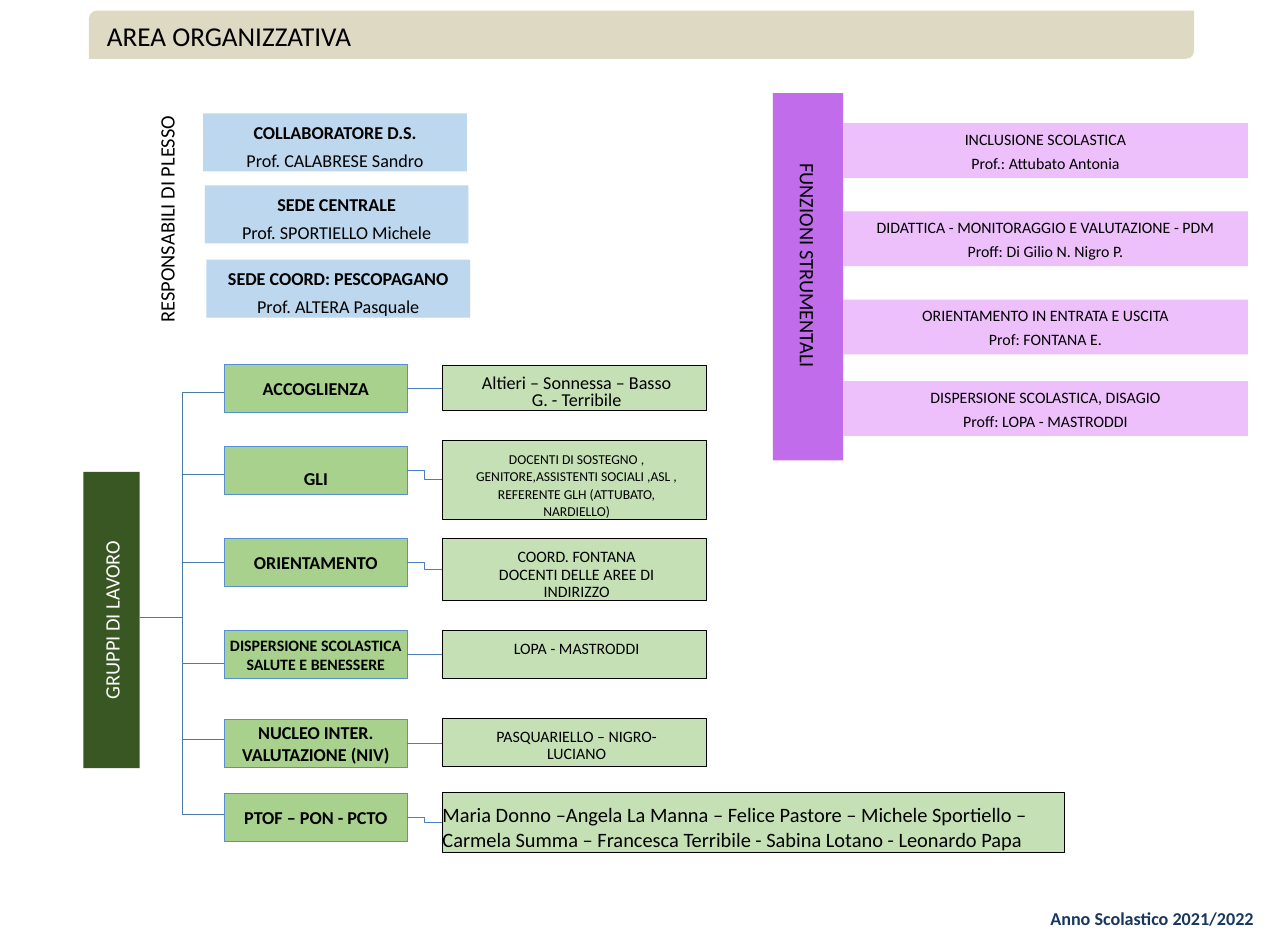
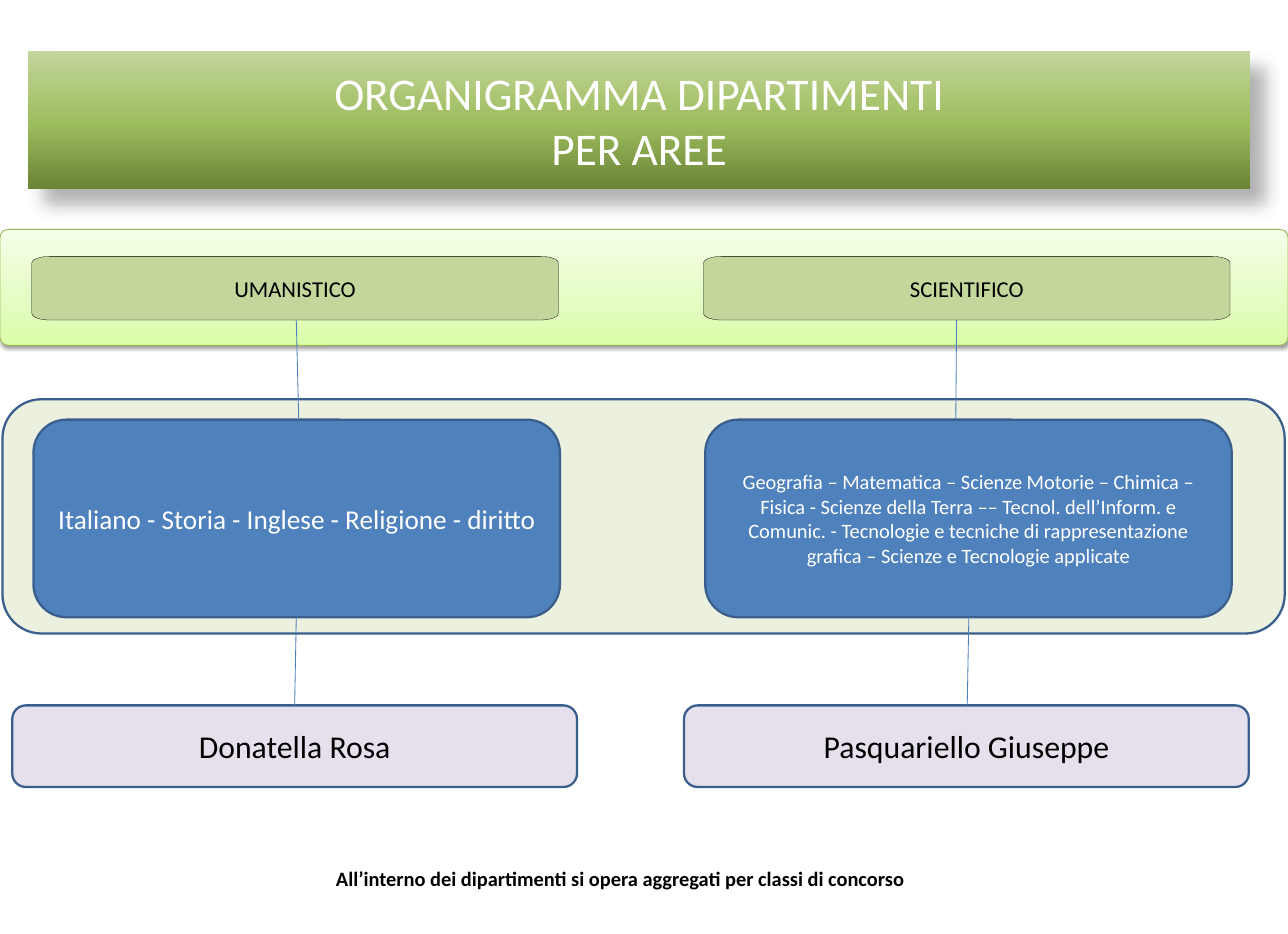
import copy
import math
from dataclasses import dataclass

from lxml import etree
from pptx import Presentation
from pptx import util as u
from pptx.dml.color import RGBColor
from pptx.enum import shapes, text
from pptx.oxml import ns

FONT = "Calibri"
CELL = u.Inches(0.1)
COLUMNS, ROWS = 157.8, 114.4

BLACK = RGBColor(0x00, 0x00, 0x00)
WHITE = RGBColor(0xFF, 0xFF, 0xFF)
NAVY = RGBColor(0x17, 0x37, 0x5E)
SAND = RGBColor(0xDD, 0xD9, 0xC3)
SKY = RGBColor(0xBD, 0xD7, 0xEE)
PURPLE = RGBColor(0xC1, 0x6D, 0xEB)
LILAC = RGBColor(0xED, 0xC0, 0xFB)
FOREST = RGBColor(0x38, 0x57, 0x23)
LEAF = RGBColor(0xA9, 0xD1, 0x8E)
MINT = RGBColor(0xC5, 0xE0, 0xB4)
GROUP_EDGE = RGBColor(0x55, 0x8E, 0xD5)
BRANCH = RGBColor(0x47, 0x7B, 0xA9)
LINK = RGBColor(0x4B, 0x7E, 0xBC)
OLIVE = RGBColor(0xC3, 0xD6, 0x9B)
CREAM = RGBColor(0xEB, 0xF1, 0xDE)
BLUE = RGBColor(0x4F, 0x81, 0xBD)
BLUE_EDGE = RGBColor(0x3A, 0x5F, 0x8C)
LAVENDER = RGBColor(0xE6, 0xE0, 0xEC)
LIME_EDGE = RGBColor(0x98, 0xB9, 0x55)
TITLE_GRADIENT = [(0, OLIVE), (0.52, RGBColor(0x9E, 0xBD, 0x5E)),
                  (1, RGBColor(0x6A, 0x83, 0x36))]
AREA_GRADIENT = [(0, RGBColor(0xF5, 0xFF, 0xE7)), (0.65, RGBColor(0xE4, 0xFC, 0xC2)),
                 (1, RGBColor(0xDA, 0xFD, 0xA7))]

RECTANGLE = shapes.MSO_SHAPE.RECTANGLE
ROUNDED = shapes.MSO_SHAPE.ROUNDED_RECTANGLE
LEFT, CENTER = text.PP_ALIGN.LEFT, text.PP_ALIGN.CENTER
TOP, MIDDLE = text.MSO_ANCHOR.TOP, text.MSO_ANCHOR.MIDDLE
NO_INSETS = (0, 0, 0, 0)
TEXT_INSETS = (1, 0.5, 1, 0.5)


def cells(count):
    return round(count * CELL)


@dataclass
class Box:
    left: float
    top: float
    width: float
    height: float

    def inner(self, left, top, width, height):
        return Box(self.left + left, self.top + top, width, height)

    def point(self, column, row):
        return self.left + column, self.top + row

    def emu(self):
        return [cells(n) for n in (self.left, self.top, self.width, self.height)]

    def middle(self):
        return self.top + self.height / 2


def find(shape, tag):
    return shape.element.find(".//" + ns.qn(tag))


def paint(shape, fill=None, edge=None, weight=0.75):
    if fill is not None:
        shape.fill.solid()
        shape.fill.fore_color.rgb = fill
    if edge is None:
        shape.line.fill.background()
    else:
        shape.line.color.rgb = edge
        shape.line.width = u.Pt(weight)
    shape.shadow.inherit = False
    return shape


def paint_gradient(shape, stops):
    shape.fill.gradient()
    shape.fill.gradient_angle = 270
    stop_list = find(shape, "a:gsLst")
    stop_list.insert(1, copy.deepcopy(stop_list[0]))
    for stop, (position, color) in zip(shape.fill.gradient_stops, stops):
        stop.position = position
        stop.color.rgb = color


def cast_shadow(shape, opacity, blur, distance, angle):
    shadow = etree.SubElement(
        find(shape, "a:effectLst"), ns.qn("a:outerShdw"),
        blurRad=str(u.Pt(blur)), dist=str(u.Pt(distance)),
        dir=str(angle * 60000), algn="t", rotWithShape="0")
    color = etree.SubElement(shadow, ns.qn("a:srgbClr"), val=str(BLACK))
    etree.SubElement(color, ns.qn("a:alpha"), val=str(opacity * 1000))


def write(shape, lines, size, color=BLACK, bold=(False,), align=CENTER, anchor=MIDDLE,
          insets=NO_INSETS, before=0, spacing=None, vertical=None, wrap=True):
    frame = shape.text_frame
    frame.auto_size = text.MSO_AUTO_SIZE.NONE
    frame.word_wrap = wrap
    frame.vertical_anchor = anchor
    (frame.margin_left, frame.margin_top,
     frame.margin_right, frame.margin_bottom) = map(cells, insets)
    if vertical:
        find(shape, "a:bodyPr").set("vert", vertical)
    for index, line in enumerate(lines):
        paragraph = frame.add_paragraph() if index else frame.paragraphs[0]
        paragraph.alignment = align
        paragraph.space_before = u.Pt(before if index else 0)
        if spacing:
            paragraph.line_spacing = u.Pt(spacing)
        run = paragraph.add_run()
        run.text = line
        run.font.name = FONT
        run.font.size = u.Pt(size)
        run.font.bold = bold[index % len(bold)]
        run.font.color.rgb = color
    return shape


def add_box(slide, box, fill=None, edge=None, weight=0.75, kind=RECTANGLE):
    return paint(slide.shapes.add_shape(kind, *box.emu()), fill, edge, weight)


def add_text(slide, box, line, size, **style):
    return write(slide.shapes.add_textbox(*box.emu()), [line], size, **style)


def add_line(slide, start, end, color=LINK, weight=0.75, elbow=False):
    kind = shapes.MSO_CONNECTOR.ELBOW if elbow else shapes.MSO_CONNECTOR.STRAIGHT
    line = slide.shapes.add_connector(kind, *map(cells, (*start, *end)))
    line.line.color.rgb = color
    line.line.width = u.Pt(weight)
    etree.SubElement(find(line, "p:spPr"), ns.qn("a:effectLst"))


def add_soft_box(slide, box, radius_x, radius_y, fill, edge, weight):
    right, bottom = box.left + box.width, box.top + box.height
    corners = [(right - radius_x, bottom - radius_y), (box.left + radius_x, bottom - radius_y),
               (box.left + radius_x, box.top + radius_y), (right - radius_x, box.top + radius_y)]
    points = []
    for quarter, (x, y) in enumerate(corners):
        for step in range(7):
            angle = math.radians(90 * quarter + 15 * step)
            points.append((cells(x + radius_x * math.cos(angle)),
                           cells(y + radius_y * math.sin(angle))))
    builder = slide.shapes.build_freeform(*points[0])
    builder.add_line_segments(points[1:])
    return paint(builder.convert_to_shape(), fill, edge, weight)


def add_slide(presentation, box, lines, size, **style):
    slide = presentation.slides.add_slide(presentation.slide_layouts[5])
    title = slide.shapes.title
    title.left, title.top, title.width, title.height = box.emu()
    write(title, lines, size, **style)
    return slide


def site_managers(slide, box):
    add_text(slide, box.inner(0, 0, 3.3, 25.6), "RESPONSABILI DI PLESSO", 18,
             align=LEFT, anchor=TOP, vertical="vert270", wrap=False)
    managers = [(0, "COLLABORATORE D.S.", "Prof. CALABRESE Sandro"),
                (8.8, "SEDE CENTRALE", "Prof. SPORTIELLO Michele"),
                (17.9, "SEDE COORD: PESCOPAGANO", "Prof. ALTERA Pasquale")]
    for index, (top, role, person) in enumerate(managers):
        card = add_box(slide, box.inner(6 + 0.2 * index, top, 32.3, 7.1), SKY)
        write(card, [role, person], 16, bold=(True, False), anchor=TOP,
              insets=(0, 1, 0, 0), before=5.2)


def coordinator_roles(slide, box):
    spine = add_box(slide, box.inner(0, 0, 8.6, box.height), PURPLE)
    write(spine, ["FUNZIONI STRUMENTALI"], 18, align=LEFT, vertical="vert")
    find(spine, "a:pPr").set("marL", str(cells(8.6)))
    roles = [(3.7, "INCLUSIONE SCOLASTICA", "Prof.: Attubato Antonia"),
             (14.5, "DIDATTICA - MONITORAGGIO E VALUTAZIONE - PDM", "Proff: Di Gilio N. Nigro P."),
             (25.3, "ORIENTAMENTO IN ENTRATA E USCITA", "Prof: FONTANA E."),
             (35.3, "DISPERSIONE SCOLASTICA, DISAGIO", "Proff: LOPA - MASTRODDI")]
    for top, role, people in roles:
        bar = add_box(slide, box.inner(8.6, top, 49.6, 6.7), LILAC)
        write(bar, [role, people], 14, insets=(0, 0.1, 0, 0), before=4.3)


def work_groups(slide, box):
    root = add_box(slide, box.inner(0, 13.2, 6.9, 36.3), FOREST)
    write(root, ["GRUPPI DI LAVORO"], 18, WHITE, vertical="vert270")
    groups = [
        (0, 3.4, ["ACCOGLIENZA"], 16, 0,
         0.2, 5.5, ["Altieri – Sonnessa – Basso G. - Terribile"], 16),
        (10.1, 13.5, ["GLI"], 16, 1.9,
         9.3, 9.7, ["DOCENTI DI SOSTEGNO , GENITORE,ASSISTENTI SOCIALI ,ASL , "
                    "REFERENTE GLH (ATTUBATO, NARDIELLO)"], 12),
        (21.3, 24.3, ["ORIENTAMENTO"], 16, 0,
         21.4, 7.6, ["COORD. FONTANA", "DOCENTI DELLE AREE DI INDIRIZZO"], 14),
        (32.6, 36.7, ["DISPERSIONE SCOLASTICA", "SALUTE E BENESSERE"], 14, 0,
         32.6, 5.9, ["LOPA - MASTRODDI"], 14),
        (43.5, 46, ["NUCLEO INTER. VALUTAZIONE (NIV)"], 16, 0,
         43.4, 5.9, ["PASQUARIELLO – NIGRO- LUCIANO"], 14),
        (52.6, 55.1, ["PTOF – PON - PCTO"], 16, 0,
         52.5, 7.3, ["Maria Donno –Angela La Manna – Felice Pastore – Michele Sportiello –"
                     "Carmela Summa – Francesca Terribile - Sabina Lotano - Leonardo Papa"], 18)]
    for (top, branch, name, name_size, inset,
         member_top, member_height, members, member_size) in groups:
        wide = member_size == 18
        name_box = box.inner(17.3, top, 22.4, 5.9)
        member_box = box.inner(44, member_top, 76.2 if wide else 32.4, member_height)
        add_line(slide, box.point(6.9, 31), box.point(17.3, branch), BRANCH, 0.5, elbow=True)
        write(add_box(slide, name_box, LEAF, GROUP_EDGE), name, name_size,
              bold=(True,), insets=(0, inset, 0, 0))
        write(add_box(slide, member_box, MINT, BLACK), members, member_size, anchor=TOP,
              align=LEFT if wide else CENTER, spacing=None if wide else 15.3,
              insets=(0, 1.2, 0, 0) if wide else (3.8, 1.2, 3.3, 0))
        stepped = abs(name_box.middle() - member_box.middle()) > 0.3
        end_row = member_box.middle() if stepped else name_box.middle()
        add_line(slide, (name_box.left + name_box.width, name_box.middle()),
                 (member_box.left, end_row), elbow=stepped)


def organisation_slide(presentation):
    slide = add_slide(presentation, Box(13.1, 2.2, 130.8, 4.3), ["AREA ORGANIZZATIVA"], 24,
                      align=LEFT)
    band = add_box(slide, Box(10.9, 1.3, 135.4, 5.9), SAND,
                   kind=shapes.MSO_SHAPE.ROUND_2_DIAG_RECTANGLE)
    band.element.addnext(slide.shapes.title.element)
    site_managers(slide, Box(18.9, 13.9, 38.7, 25.6))
    coordinator_roles(slide, Box(94.7, 11.4, 58.2, 45))
    work_groups(slide, Box(10.2, 44.6, 120.2, 59.8))
    add_text(slide, Box(127.6, 111.1, 27.1, 2.8), "Anno Scolastico 2021/2022", 16,
             color=NAVY, bold=(True,), anchor=TOP, insets=(0, 0.1, 0, 0), wrap=False)


def department(slide, box, area, subjects, subject_size, person, upper_stem, lower_stem):
    header = add_soft_box(slide, box.inner(2.4, 0, 64.5, 7.8), 2.2, 0.8, OLIVE, BLACK, 0.25)
    write(header, [area], 20)
    card = add_box(slide, box.inner(2.6, 20, 64.5, 24.2), BLUE, BLUE_EDGE, 2, ROUNDED)
    write(card, [subjects], subject_size, WHITE, insets=TEXT_INSETS)
    plate = add_box(slide, box.inner(0, 55, 69.2, 10), LAVENDER, BLUE_EDGE, 2, ROUNDED)
    write(plate, [person], 28, insets=TEXT_INSETS)
    for (start, end), top, bottom in ((upper_stem, 7.8, 20), (lower_stem, 44.2, 55)):
        add_line(slide, box.point(start, top), box.point(end, bottom))


def departments_slide(presentation):
    slide = add_slide(presentation, Box(3.4, 6.2, 149.8, 17),
                      ["ORGANIGRAMMA DIPARTIMENTI", "PER AREE"], 40, color=WHITE)
    title = slide.shapes.title
    paint(title)
    paint_gradient(title, TITLE_GRADIENT)
    cast_shadow(title, 30, 15, 18, 45)
    area_band = add_box(slide, Box(0, 28.1, COLUMNS, 14.2), edge=LIME_EDGE, kind=ROUNDED)
    area_band.adjustments[0] = 0.07
    paint_gradient(area_band, AREA_GRADIENT)
    cast_shadow(area_band, 38, 3.1, 1.6, 90)
    add_box(slide, Box(0.3, 48.9, 157.1, 28.7), CREAM, BLUE_EDGE, 2, ROUNDED)
    department(slide, Box(1.5, 31.4, 69.2, 65), "UMANISTICO",
               "Italiano - Storia - Inglese - Religione - diritto", 24,
               "Donatella Rosa", (34.8, 35.1), (34.8, 34.6))
    department(slide, Box(83.8, 31.4, 69.2, 65), "SCIENTIFICO",
               "Geografia – Matematica – Scienze Motorie – Chimica – Fisica - Scienze della "
               "Terra –– Tecnol. dell’Inform. e Comunic. - Tecnologie e tecniche di "
               "rappresentazione grafica – Scienze e Tecnologie applicate", 18,
               "Pasquariello Giuseppe", (33.4, 33.3), (34.9, 34.7))
    add_text(slide, Box(8.1, 105.6, 135.8, 4),
             "All’interno dei dipartimenti si opera aggregati per classi di concorso", 18,
             bold=(True,), anchor=TOP, insets=TEXT_INSETS)


def main():
    presentation = Presentation()
    presentation.slide_width = cells(COLUMNS)
    presentation.slide_height = cells(ROWS)
    organisation_slide(presentation)
    departments_slide(presentation)
    presentation.save("out.pptx")


if __name__ == "__main__":
    main()
